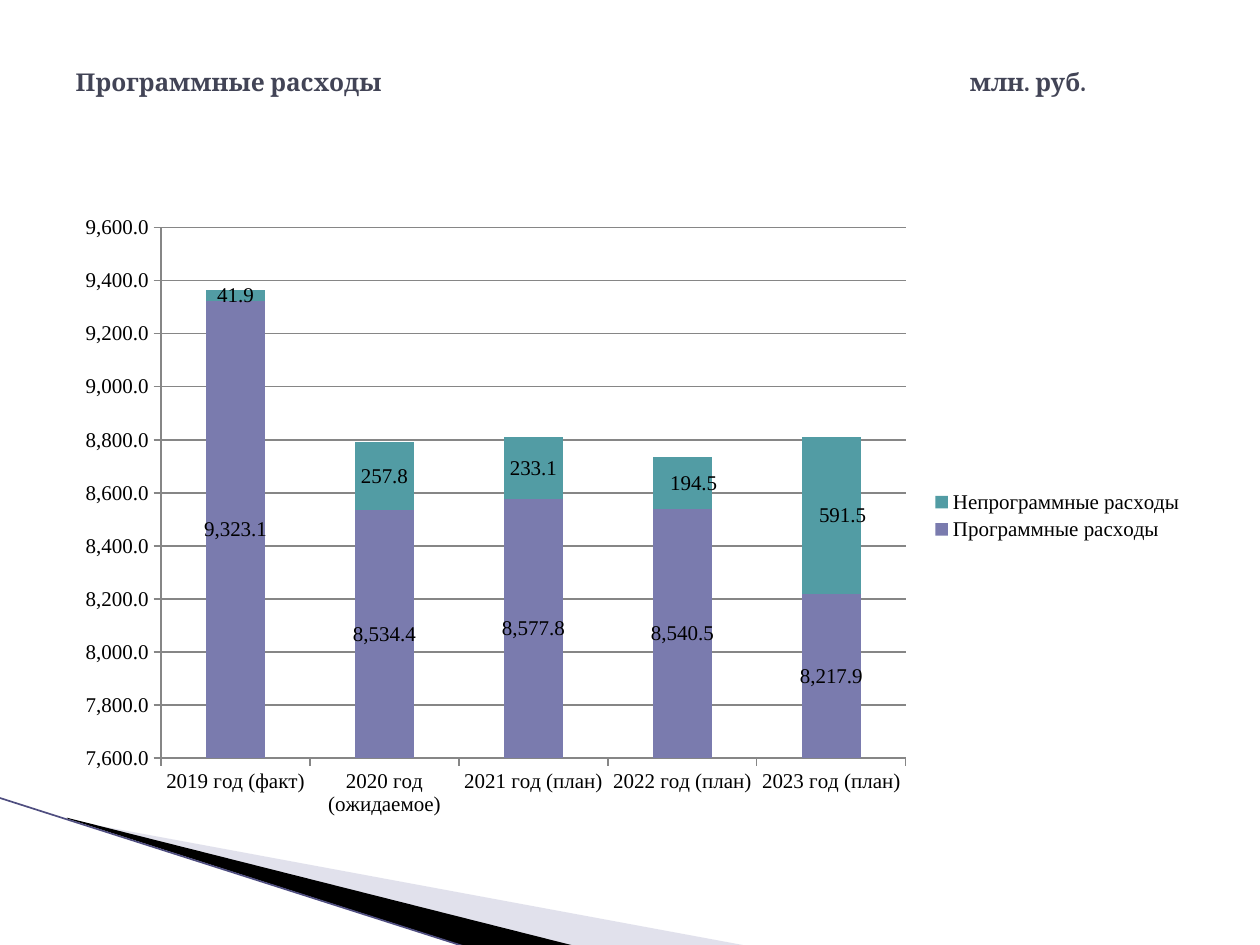
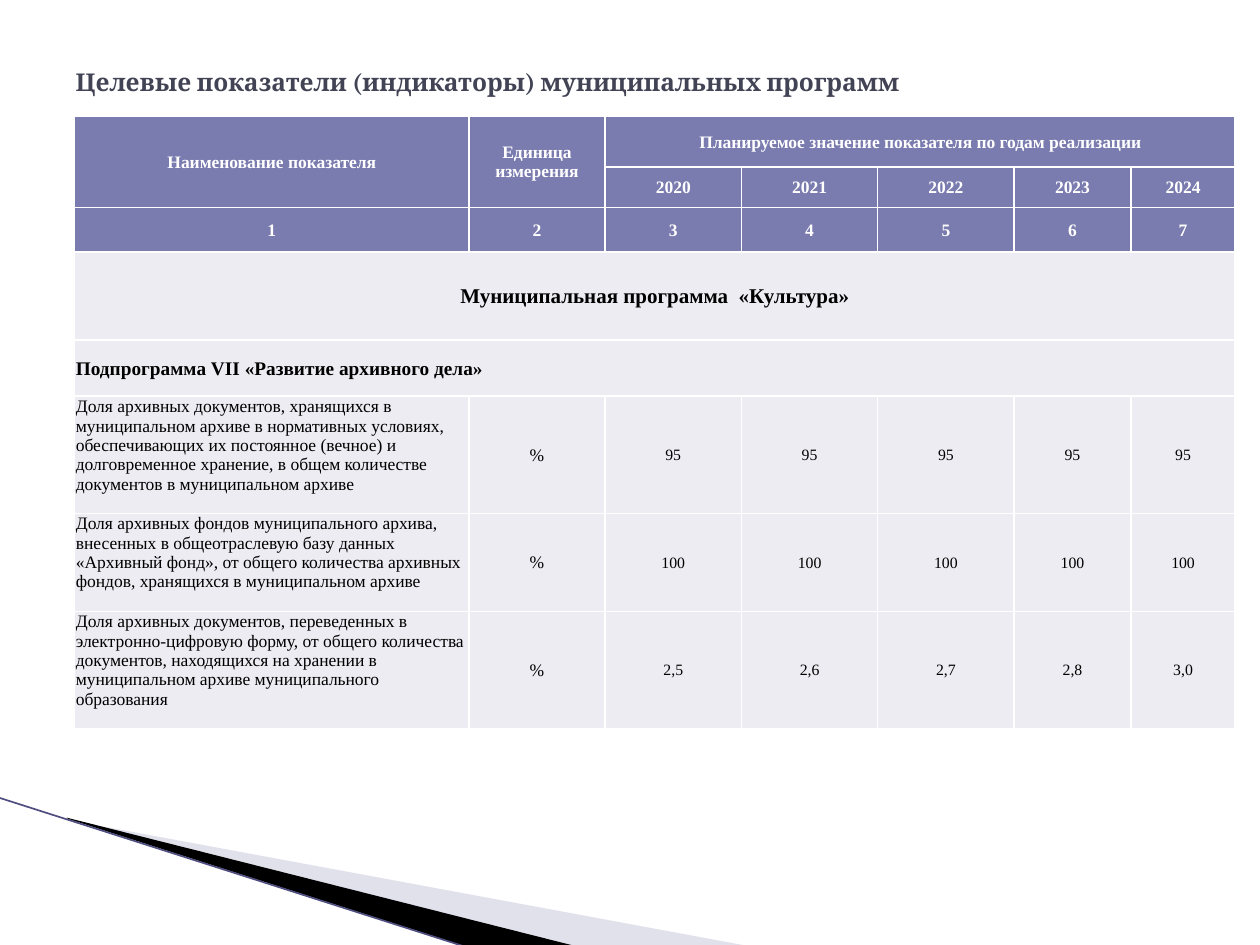
from copy import deepcopy

from lxml import etree
from pptx import Presentation
from pptx.chart.data import CategoryChartData
from pptx.dml.color import RGBColor
from pptx.enum import chart as charts, shapes, text
from pptx.oxml import ns
from pptx.util import Pt

WHITE = RGBColor(0xFF, 0xFF, 0xFF)
BLACK = RGBColor(0, 0, 0)
SLATE = RGBColor(0x42, 0x44, 0x56)
VIOLET = RGBColor(0x7A, 0x7B, 0xAE)
TEAL = RGBColor(0x52, 0x9C, 0xA4)
LILAC = RGBColor(0xB6, 0xB6, 0xD1)
PALE = RGBColor(0xEC, 0xEC, 0xF2)
INDIGO = RGBColor(0x4F, 0x4E, 0x80)
GRAY = RGBColor(0x86, 0x86, 0x86)
TITLE_FONT, BODY_FONT = "Cambria", "Times New Roman"
NUMBER_FORMAT = "#,##0.0"


def sub(parent, tag, **attributes):
    """Append a namespaced XML child such as a:ln."""
    return etree.SubElement(parent, ns.qn(tag), attributes)


def set_font(font, size, color=BLACK, bold=False, name=BODY_FONT):
    font.size, font.bold, font.name = Pt(size), bold, name
    font.color.rgb = color


prs = Presentation()
prs.slide_width, prs.slide_height = Pt(720), Pt(540)

# Shared title and corner wedge
titles = [
    "Программные расходы\tмлн. руб.",
    "Целевые показатели (индикаторы) муниципальных программ",
]
wedges = [
    (LILAC, [(39.6, 468.7), (428.4, 540.7), (328.3, 540.7), (39.6, 468)]),
    (BLACK, [(38.2, 467.3), (329, 540.7), (267.8, 541.4), (38.9, 468)]),
]
for heading in titles:
    slide = prs.slides.add_slide(prs.slide_layouts[5])
    for color, corners in wedges:
        points = [(Pt(x), Pt(y)) for x, y in corners]
        builder = slide.shapes.build_freeform(*points[0])
        builder.add_line_segments(points[1:])
        wedge = builder.convert_to_shape()
        wedge.shadow.inherit = False
        wedge.fill.solid()
        wedge.fill.fore_color.rgb = color
        wedge.line.fill.background()
        if color == LILAC:
            sub(wedge._element.spPr.find(".//" + ns.qn("a:srgbClr")), "a:alpha", val="40000")
    edge = slide.shapes.add_connector(
        shapes.MSO_CONNECTOR.STRAIGHT, Pt(-0.7), Pt(455.8), Pt(267.1), Pt(541.4))
    edge.line.color.rgb = INDIGO
    edge.line.width = Pt(0.95)
    sub(edge._element.spPr, "a:effectLst")

    title = slide.shapes.title
    title.left, title.top, title.width, title.height = Pt(36), Pt(21.6), Pt(648), Pt(49.7)
    frame = title.text_frame
    frame.text = heading
    frame.word_wrap = True
    frame.auto_size = text.MSO_AUTO_SIZE.NONE
    frame.vertical_anchor = text.MSO_ANCHOR.MIDDLE
    paragraph = frame.paragraphs[0]
    paragraph.alignment = text.PP_ALIGN.LEFT
    if "\t" in heading:
        tabs = sub(paragraph._p.get_or_add_pPr(), "a:tabLst")
        sub(tabs, "a:tab", pos=str(Pt(511)), algn="l")
    set_font(paragraph.font, 14, SLATE, True, TITLE_FONT)

chart_slide, table_slide = prs.slides

# Programme and non-programme spending
spending = CategoryChartData(number_format=NUMBER_FORMAT)
spending.categories = ["2019 год (факт)", "2020 год (ожидаемое)", "2021 год (план)",
                       "2022 год (план)", "2023 год (план)"]
spending.add_series("Программные расходы", [9323.1, 8534.4, 8577.8, 8540.5, 8217.9])
spending.add_series("Непрограммные расходы", [41.9, 257.8, 233.1, 194.5, 591.5])
chart = chart_slide.shapes.add_chart(
    charts.XL_CHART_TYPE.COLUMN_STACKED, Pt(36), Pt(116.6), Pt(648), Pt(356.4), spending).chart
chart.has_title = False
set_font(chart.font, 12)
chart.has_legend = True
chart.legend.position = charts.XL_LEGEND_POSITION.RIGHT
chart.legend.include_in_layout = False
set_font(chart.legend.font, 12)

years, amounts = chart.category_axis, chart.value_axis
for axis in (years, amounts):
    axis.major_tick_mark = charts.XL_TICK_MARK.OUTSIDE
    axis.format.line.color.rgb = GRAY
    set_font(axis.tick_labels.font, 12)
amounts.minimum_scale, amounts.maximum_scale, amounts.major_unit = 7600, 9600, 200
amounts.has_major_gridlines = True
amounts.major_gridlines.format.line.color.rgb = GRAY
amounts.tick_labels.number_format = NUMBER_FORMAT
amounts.tick_labels.number_format_is_linked = False

plot = chart.plots[0]
plot.gap_width, plot.overlap, plot.vary_by_categories = 150, 100, False
for series, color in zip(plot.series, (VIOLET, TEAL)):
    series.format.fill.solid()
    series.format.fill.fore_color.rgb = color
    labels = series.data_labels
    labels.show_value = True
    labels.number_format = NUMBER_FORMAT
    labels.number_format_is_linked = False
    set_font(labels.font, 12)

# The last two upper labels sit slightly right of their bars
group = labels._element
settings = [item for item in group if item.tag != ns.qn("c:showLeaderLines")]
for position, (index, shift) in enumerate([("3", "0.01"), ("4", "0.01")]):
    label = etree.Element(ns.qn("c:dLbl"))
    sub(label, "c:idx", val=index)
    layout = sub(sub(label, "c:layout"), "c:manualLayout")
    sub(layout, "c:x", val=shift)
    sub(layout, "c:y", val="0")
    label.extend(deepcopy(item) for item in settings)
    group.insert(position, label)

# Target indicators
rows = [
    ["Наименование показателя", "Единица измерения",
     "Планируемое значение показателя по годам реализации", "", "", "", ""],
    ["", "", "2020", "2021", "2022", "2023", "2024"],
    ["1", "2", "3", "4", "5", "6", "7"],
    ["Муниципальная программа  «Культура»"] + [""] * 6,
    ["Подпрограмма VII «Развитие архивного дела»"] + [""] * 6,
    ["Доля архивных документов, хранящихся в муниципальном архиве в нормативных условиях, "
     "обеспечивающих их постоянное (вечное) и долговременное хранение, в общем количестве "
     "документов в муниципальном архиве", "%"] + ["95"] * 5,
    ["Доля архивных фондов муниципального архива, внесенных в общеотраслевую базу данных "
     "«Архивный фонд», от общего количества архивных фондов, хранящихся в муниципальном "
     "архиве", "%"] + ["100"] * 5,
    ["Доля архивных документов, переведенных в электронно-цифровую форму, от общего "
     "количества документов, находящихся на хранении в муниципальном архиве муниципального "
     "образования", "%", "2,5", "2,6", "2,7", "2,8", "3,0"],
]
widths = [225.2] + [77.9] * 4 + [66.8, 59.6]
heights = [29.1, 23, 25.6, 50.2, 32.2, 66.9, 56, 66.9]
HEADER_ROWS, PROGRAMME, SUBPROGRAMME = 3, 3, 4

table = table_slide.shapes.add_table(
    len(rows), len(widths), Pt(42.7), Pt(66.4), Pt(sum(widths)), Pt(sum(heights))).table
for column, width in zip(table.columns, widths):
    column.width = Pt(width)
for row, height in zip(table.rows, heights):
    row.height = Pt(height)

for r, values in enumerate(rows):
    for c, value in enumerate(values):
        cell = table.cell(r, c)
        properties = cell._tc.get_or_add_tcPr()
        for side in ("a:lnL", "a:lnR", "a:lnT", "a:lnB"):
            border = sub(properties, side, w=str(Pt(1)))
            sub(sub(border, "a:solidFill"), "a:srgbClr", val=str(WHITE))
        is_header = r < HEADER_ROWS
        is_indicator = r > SUBPROGRAMME
        cell.fill.solid()
        cell.fill.fore_color.rgb = VIOLET if is_header else PALE
        cell.margin_left = cell.margin_right = cell.margin_top = Pt(0.7)
        cell.margin_bottom = 0
        is_name = is_indicator and c == 0
        cell.vertical_anchor = text.MSO_ANCHOR.TOP if is_name else text.MSO_ANCHOR.MIDDLE
        cell.text = value
        paragraph = cell.text_frame.paragraphs[0]
        is_left = is_name or r == SUBPROGRAMME
        paragraph.alignment = text.PP_ALIGN.LEFT if is_left else text.PP_ALIGN.CENTER
        size = {PROGRAMME: 12, SUBPROGRAMME: 11}.get(r, 9 if is_indicator and c > 1 else 10)
        set_font(paragraph.font, size, WHITE if is_header else BLACK, not is_indicator)

for first, last in [((0, 0), (1, 0)), ((0, 1), (1, 1)), ((0, 2), (0, 6)),
                    ((PROGRAMME, 0), (PROGRAMME, 6)), ((SUBPROGRAMME, 0), (SUBPROGRAMME, 6))]:
    table.cell(*first).merge(table.cell(*last))

prs.save("out.pptx")
